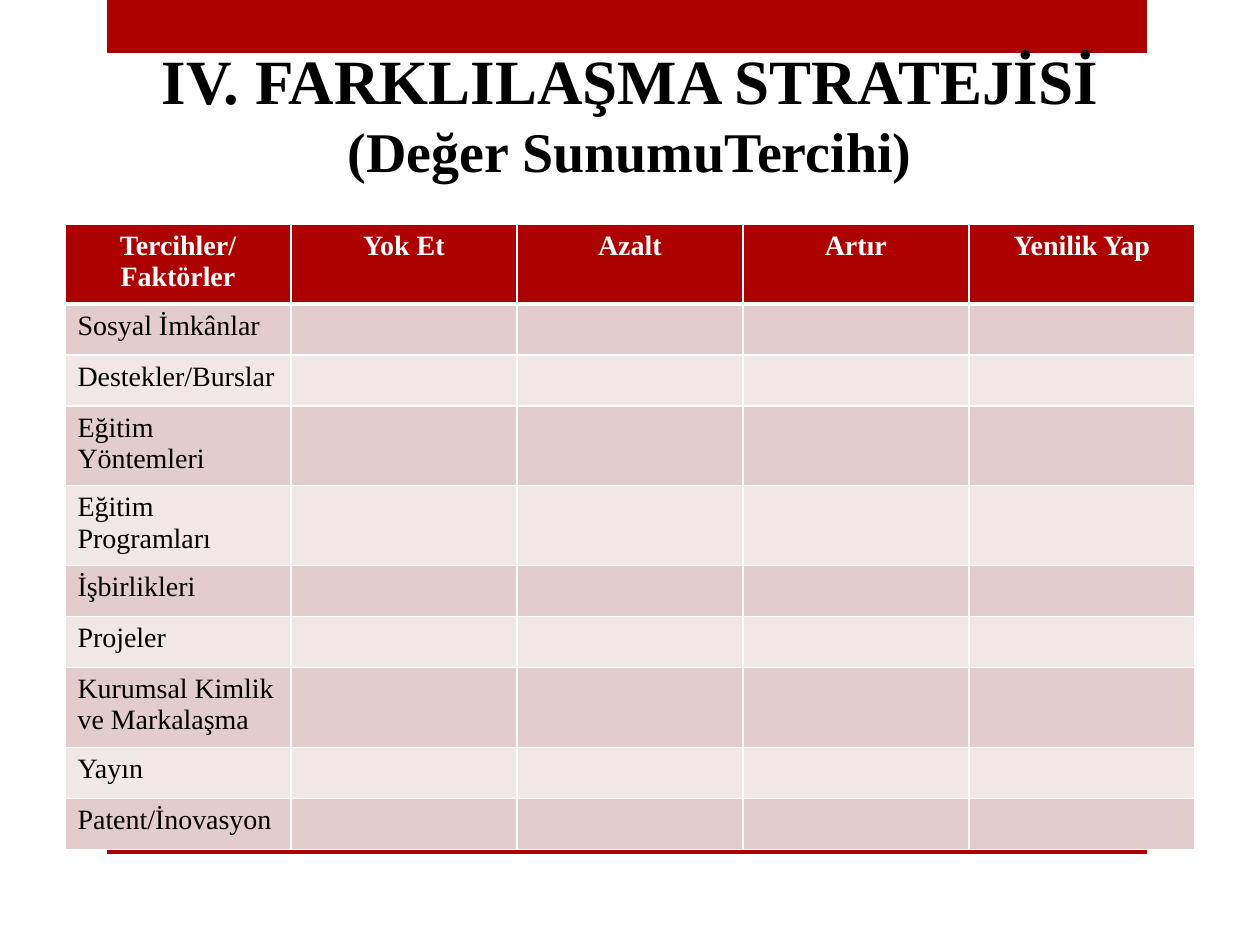
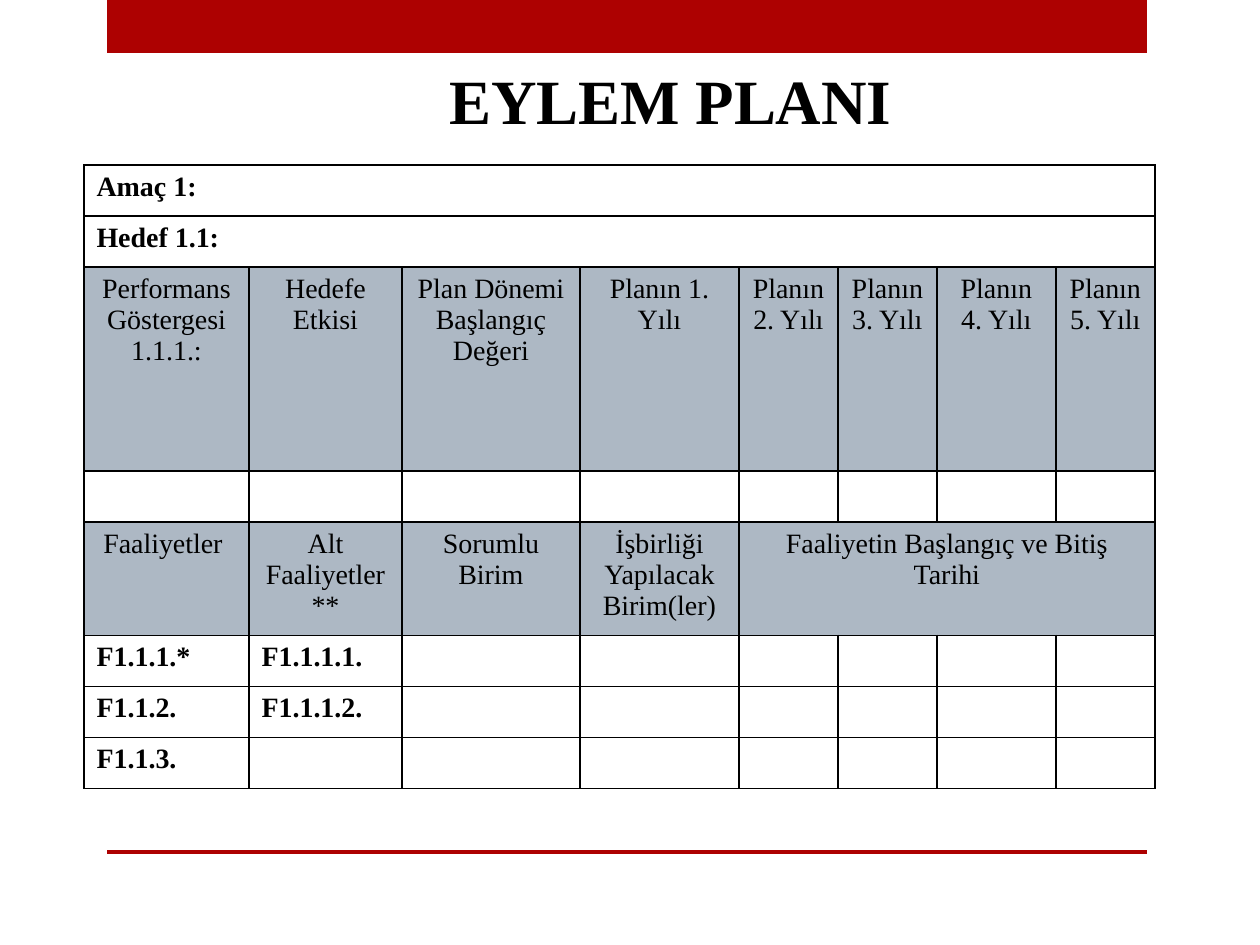
from lxml import etree
from pptx import Presentation
from pptx import util as u
from pptx.dml.color import RGBColor
from pptx.enum import shapes, text
from pptx.oxml import ns

# Shared look
FONT = "Times New Roman"
RED = RGBColor(0xAD, 0x01, 0x01)
ROSE = RGBColor(0xE3, 0xCC, 0xCC)
PALE_ROSE = RGBColor(0xF1, 0xE7, 0xE7)
SLATE = RGBColor(0xAD, 0xB8, 0xC4)
BLACK = RGBColor(0, 0, 0)
WHITE = RGBColor(0xFF, 0xFF, 0xFF)
PX_PER_INCH = 126
BANDS = [(107, 0, 1040, 53), (107, 850, 1040, 4)]
ROW_HEIGHT = 51
CELL_SIZE = 16

# Content: strategy table
STRATEGY_TITLE = [("IV. FARKLILAŞMA STRATEJİSİ ", 36), ("(Değer SunumuTercihi)", 32)]
CHOICES = ["Tercihler/Faktörler", "Yok Et", "Azalt", "Artır", "Yenilik Yap"]
FACTORS = [
    "Sosyal İmkânlar", "Destekler/Burslar", "Eğitim Yöntemleri",
    "Eğitim Programları", "İşbirlikleri", "Projeler",
    "Kurumsal Kimlik ve Markalaşma", "Yayın", "Patent/İnovasyon",
]

# Content: action plan table
PLAN_TITLE = [("EYLEM PLANI", 36)]
PLAN_COLUMNS = [165, 153, 178, 159, 99, 99, 119, 99]
PLAN_ROWS = [
    ["Amaç 1:"],
    ["Hedef 1.1:"],
    ["Performans Göstergesi 1.1.1.:", "Hedefe Etkisi", "Plan Dönemi Başlangıç Değeri"]
    + [f"Planın {year}. Yılı" for year in range(1, 6)],
    [],
    ["Faaliyetler ", "Alt Faaliyetler **", "Sorumlu Birim",
     "İşbirliği Yapılacak Birim(ler)", "Faaliyetin Başlangıç ve Bitiş Tarihi"],
    ["F1.1.1.*", "F1.1.1.1."],
    ["F1.1.2.", "F1.1.1.2."],
    ["F1.1.3."],
]
PLAN_HEADINGS = {2, 4}
PLAN_MERGES = [(0, 0), (1, 0), (4, 4)]  # row and first column, up to the last column
INDICATOR_ROW, INDICATOR_HEIGHT = 2, 204


def px(length):
    return u.Emu(round(length * 914400 / PX_PER_INCH))


def box(*lengths):
    return [px(length) for length in lengths]


def write(paragraph, words, size, color=BLACK, bold=True):
    run = paragraph.add_run()
    run.text = words
    run.font.color.rgb = color
    for name, value in dict(name=FONT, size=u.Pt(size), bold=bold).items():
        setattr(run.font, name, value)


def add_titled_slide(deck, title_runs, place):
    slide = deck.slides.add_slide(deck.slide_layouts[5])
    # Bands go behind the title
    for depth, band_place in enumerate(BANDS, 2):
        band = slide.shapes.add_shape(shapes.MSO_SHAPE.RECTANGLE, *box(*band_place))
        band.shadow.inherit = False
        band.fill.solid()
        band.fill.fore_color.rgb = RED
        band.line.fill.background()
        slide.shapes._spTree.insert(depth, band._element)
    title = slide.shapes.title
    for name, value in zip(("left", "top", "width", "height"), box(*place)):
        setattr(title, name, value)
    frame = title.text_frame
    settings = dict(word_wrap=True, vertical_anchor=text.MSO_ANCHOR.TOP,
                    auto_size=text.MSO_AUTO_SIZE.SHAPE_TO_FIT_TEXT)
    for name, value in settings.items():
        setattr(frame, name, value)
    frame.paragraphs[0].alignment = text.PP_ALIGN.CENTER
    for words, size in title_runs:
        write(frame.paragraphs[0], words, size)
    return slide


def add_grid(slide, place, columns, heights):
    frame = slide.shapes.add_table(len(heights), len(columns), *box(*place))
    table = frame.table
    table.first_row = table.horz_banding = False
    for column, width in zip(table.columns, columns):
        column.width = px(width)
    for row, height in zip(table.rows, heights):
        row.height = px(height)
    frame.height = px(place[3])  # includes the rows that grow with wrapped text
    return table


def set_borders(cell, color, top=1, bottom=1):
    properties = cell._tc.get_or_add_tcPr()
    sides = dict(lnL=1, lnR=1, lnT=top, lnB=bottom)
    for order, (side, points) in enumerate(sides.items()):
        line = etree.Element(ns.qn(f"a:{side}"), w=str(u.Pt(points)))
        fill = etree.SubElement(line, ns.qn("a:solidFill"))
        etree.SubElement(fill, ns.qn("a:srgbClr"), val=str(color))
        properties.insert(order, line)


def fill_cell(cell, words, fill, color=BLACK, bold=False, centred=False):
    if fill is None:
        cell.fill.background()
    else:
        cell.fill.solid()
        cell.fill.fore_color.rgb = fill
    if words:
        paragraph = cell.text_frame.paragraphs[0]
        if centred:
            paragraph.alignment = text.PP_ALIGN.CENTER
        write(paragraph, words, CELL_SIZE, color, bold)


def add_strategy(deck):
    slide = add_titled_slide(deck, STRATEGY_TITLE, (134, 35, 992, 158))
    rows = [CHOICES] + [[factor] for factor in FACTORS]
    table = add_grid(slide, (65, 224, 1131, 626), [226] * len(CHOICES),
                     [ROW_HEIGHT] * len(rows))
    for r, words in enumerate(rows):
        heading = r == 0
        fill = RED if heading else ROSE if r % 2 else PALE_ROSE
        for c in range(len(CHOICES)):
            cell = table.cell(r, c)
            fill_cell(cell, words[c] if c < len(words) else "", fill,
                      WHITE if heading else BLACK, heading, heading)
            set_borders(cell, WHITE, top=3 if r == 1 else 1, bottom=3 if heading else 1)


def add_plan(deck):
    slide = add_titled_slide(deck, PLAN_TITLE, (229, 55, 883, 89))
    heights = [INDICATOR_HEIGHT if r == INDICATOR_ROW else ROW_HEIGHT
               for r in range(len(PLAN_ROWS))]
    table = add_grid(slide, (84, 165, 1071, 627), PLAN_COLUMNS, heights)
    last = len(PLAN_COLUMNS) - 1
    for r, first in PLAN_MERGES:
        table.cell(r, first).merge(table.cell(r, last))
    for r, words in enumerate(PLAN_ROWS):
        heading = r in PLAN_HEADINGS
        for c in range(last + 1):
            cell = table.cell(r, c)
            fill_cell(cell, words[c] if c < len(words) else "",
                      SLATE if heading else None, bold=not heading, centred=heading)
            set_borders(cell, BLACK)


def main():
    deck = Presentation()
    deck.slide_width, deck.slide_height = u.Inches(10), u.Inches(7.5)
    add_strategy(deck)
    add_plan(deck)
    deck.save("out.pptx")


if __name__ == "__main__":
    main()
